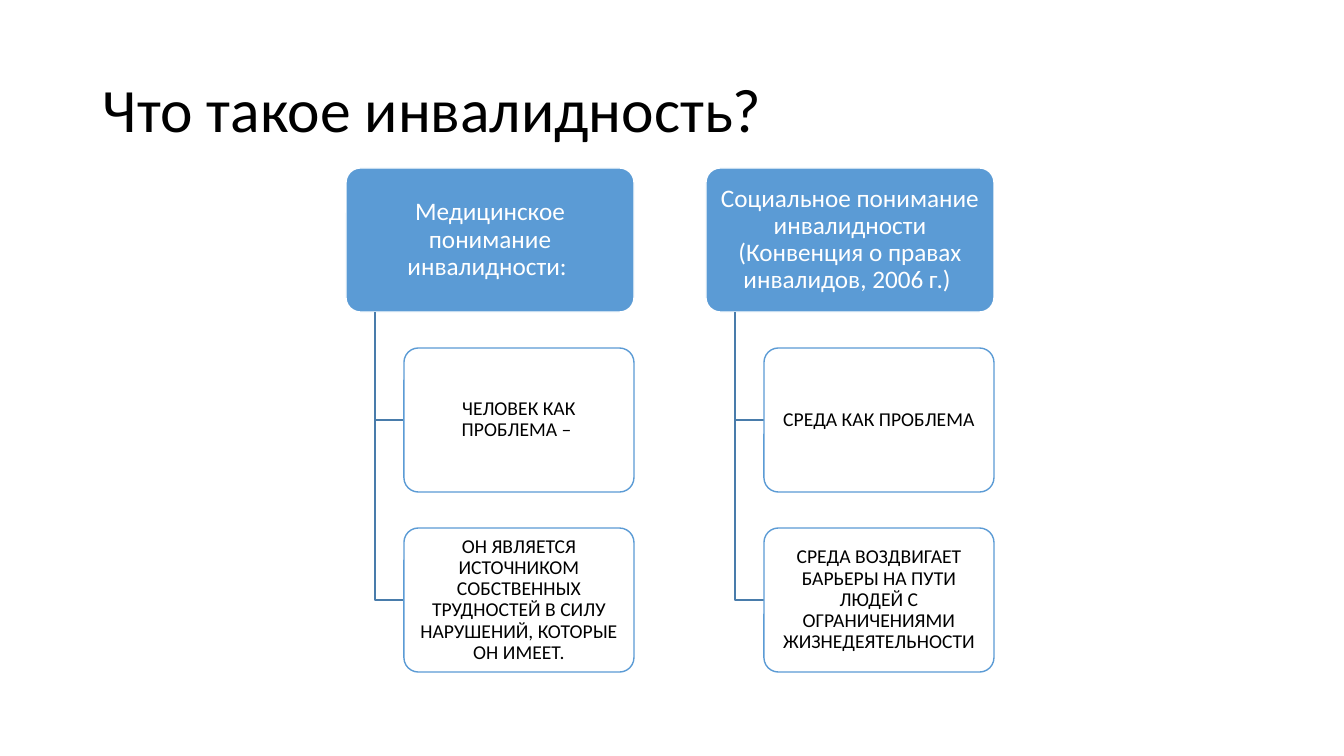
from pptx import Presentation
from pptx.dml.color import RGBColor
from pptx.enum.shapes import MSO_SHAPE as Preset
from pptx.enum.text import MSO_ANCHOR as Anchor, PP_ALIGN as Align
from pptx.oxml.ns import qn
from pptx.util import Emu, Pt
from lxml.etree import SubElement

WHITE = RGBColor(0xFF, 0xFF, 0xFF)
BLACK = RGBColor(0x00, 0x00, 0x00)
BLUE = RGBColor(0x5B, 0x9B, 0xD5)
DARK_BLUE = RGBColor(0x49, 0x7C, 0xAB)


def px(length):
    return Emu(round(length * 914400 / 100.8))


def write(shape, text, size, color, align, inset_x, inset_y):
    frame = shape.text_frame
    frame.word_wrap = True
    frame.vertical_anchor = Anchor.MIDDLE
    frame.margin_left = frame.margin_right = px(inset_x)
    frame.margin_top = frame.margin_bottom = px(inset_y)
    frame.text = text
    para = frame.paragraphs[0]
    para.alignment = align
    para.line_spacing = 0.9
    span = para.runs[0]
    span.font.name = "Calibri"
    span.font.size = Pt(size)
    span.font.color.rgb = color


COLUMNS = [
    ("Медицинское понимание инвалидности: ",
     ["ЧЕЛОВЕК КАК ПРОБЛЕМА – ",
      "ОН ЯВЛЯЕТСЯ ИСТОЧНИКОМ СОБСТВЕННЫХ ТРУДНОСТЕЙ В СИЛУ НАРУШЕНИЙ, КОТОРЫЕ ОН ИМЕЕТ."]),
    ("Социальное понимание инвалидности (Конвенция о правах инвалидов, 2006 г.) ",
     ["СРЕДА КАК ПРОБЛЕМА",
      "СРЕДА ВОЗДВИГАЕТ БАРЬЕРЫ НА ПУТИ ЛЮДЕЙ С ОГРАНИЧЕНИЯМИ ЖИЗНЕДЕЯТЕЛЬНОСТИ"]),
]
LEFT, TOP, HEADER_WIDTH, HEIGHT = 346, 168, 288, 144
COLUMN_STEP, ROW_STEP = 360, 180
TRUNK, INDENT = 29, 58

deck = Presentation()
deck.slide_width, deck.slide_height = px(1344), px(756)
page = deck.slides.add_slide(deck.slide_layouts[6])

title = page.shapes.add_textbox(px(93), px(40), px(1159), px(146))
write(title, "Что такое инвалидность?", 44, BLACK, Align.LEFT, 10, 5)

for column, (heading, points) in enumerate(COLUMNS):
    left = LEFT + column * COLUMN_STEP
    boxes = [(heading, left, HEADER_WIDTH, BLUE, WHITE, WHITE, 18, 9)]
    boxes += [(point, left + INDENT, HEADER_WIDTH - INDENT, WHITE, BLUE, BLACK, 14, 8)
              for point in points]
    for row, (text, x, width, fill, outline, color, size, inset) in enumerate(boxes):
        top = TOP + row * ROW_STEP
        if row:
            middle = top + HEIGHT // 2
            builder = page.shapes.build_freeform(px(left + TRUNK), px(TOP + HEIGHT))
            builder.add_line_segments(
                [(px(left + TRUNK), px(middle)), (px(x), px(middle))], close=False)
            branch = builder.convert_to_shape()
            branch.shadow.inherit = False
            branch.fill.background()
            branch.line.color.rgb = DARK_BLUE
            branch.line.width = Pt(1)
        box = page.shapes.add_shape(
            Preset.ROUNDED_RECTANGLE, px(x), px(top), px(width), px(HEIGHT))
        box.adjustments[0] = 0.1
        box.shadow.inherit = False
        box.fill.solid()
        box.fill.fore_color.rgb = fill
        box.line.color.rgb = outline
        box.line.width = Pt(1)
        if row:
            tint = box.fill._xPr.find(qn("a:solidFill"))[0]
            SubElement(tint, qn("a:alpha")).set("val", "90000")
        write(box, text, size, color, Align.CENTER, inset, 6)

deck.save("out.pptx")
